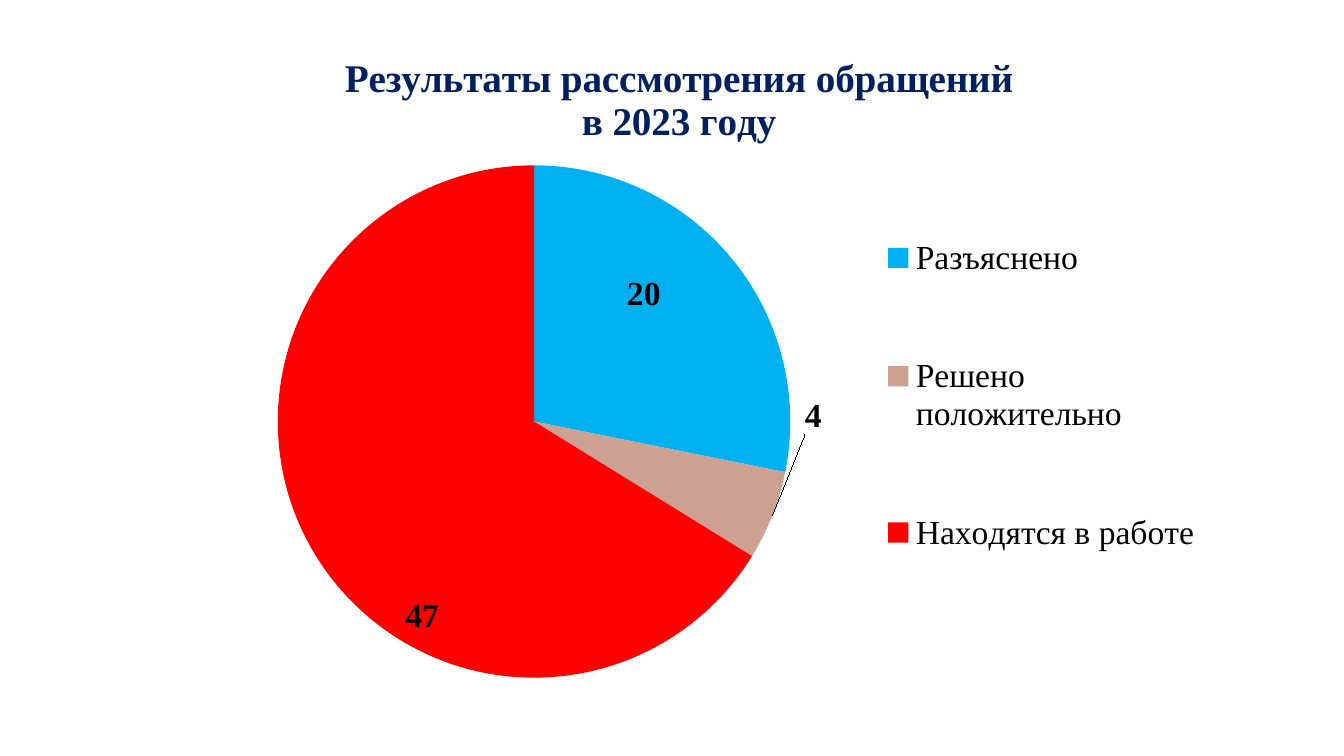
"""Build a slide with a pie chart of the outcomes of appeals in 2023."""
from lxml.etree import SubElement
from pptx import Presentation
from pptx.chart.data import CategoryChartData
from pptx.dml.color import RGBColor
from pptx.enum.chart import XL_CHART_TYPE, XL_LABEL_POSITION as POS, XL_LEGEND_POSITION
from pptx.oxml.ns import qn
from pptx.util import Inches, Pt

NAVY = RGBColor(0x00, 0x20, 0x60)
BLACK = RGBColor(0x00, 0x00, 0x00)
SKY = RGBColor(0x00, 0xB0, 0xF0)
ROSE = RGBColor(0xCC, 0xA1, 0x92)
RED = RGBColor(0xFF, 0x00, 0x00)
SERIF = "Times New Roman"


def set_font(font, size, color, bold):
    font.name, font.size, font.bold = SERIF, Pt(size), bold
    font.color.rgb = color


def set_layout(parent, index, **settings):
    for old in parent.findall(qn("c:layout")):
        parent.remove(old)
    layout = SubElement(parent, qn("c:layout"))
    manual = SubElement(layout, qn("c:manualLayout"))
    for tag, value in settings.items():
        SubElement(manual, qn(f"c:{tag}")).set("val", str(value))
    parent.insert(index, layout)


prs = Presentation()
prs.slide_width, prs.slide_height = Inches(13.33), Inches(7.5)
s = prs.slides.add_slide(prs.slide_layouts[6])

data = CategoryChartData()
data.categories = ["Разъяснено", "Решено положительно", "Находятся в работе"]
data.add_series("Series 1", [20, 4, 47])
chart = s.shapes.add_chart(XL_CHART_TYPE.PIE, Inches(1.59), Inches(0.33),
                           Inches(10.59), Inches(6.53), data).chart
chart.font.name, chart.font.size = "Roboto", Pt(10)
chart.font.color.rgb = BLACK

chart.has_title = True
tf = chart.chart_title.text_frame
tf.text = "Результаты рассмотрения обращений\nв 2023 году"
for p in tf.paragraphs:
    for r in p.runs:
        set_font(r.font, 28, NAVY, True)

chart.has_legend = True
legend = chart.legend
legend.position = XL_LEGEND_POSITION.RIGHT
legend.include_in_layout = False
set_font(legend.font, 24, BLACK, False)

plot = chart.plots[0]
plot.vary_by_categories = True
series = plot.series[0]
series.data_labels.show_value = True
set_font(series.data_labels.font, 24, BLACK, True)
for i, color in enumerate([SKY, ROSE, RED]):
    point = series.points[i]
    point.format.fill.solid()
    point.format.fill.fore_color.rgb = color
    point.format.line.fill.background()
    point.data_label.position = POS.CENTER
    set_font(point.data_label.font, 24, BLACK, True)

label_shifts = [(0.01, -0.07), (0.15, -0.08), (0, 0.2)]
for label, (dx, dy) in zip(chart.element.xpath(".//c:dLbl"), label_shifts):
    set_layout(label, 1, x=dx, y=dy)
set_layout(chart.element.xpath(".//c:title")[0], 1,
           xMode="edge", yMode="edge", x=0.17, y=0.03)
set_layout(chart.element.xpath(".//c:legend")[0], 1,
           xMode="edge", yMode="edge", x=0.67, y=0.19, w=0.31, h=0.72)
set_layout(chart.element.xpath(".//c:plotArea")[0], 0, layoutTarget="inner",
           xMode="edge", yMode="edge", x=0.11, y=0.2, w=0.48, h=0.78)

prs.save("out.pptx")
